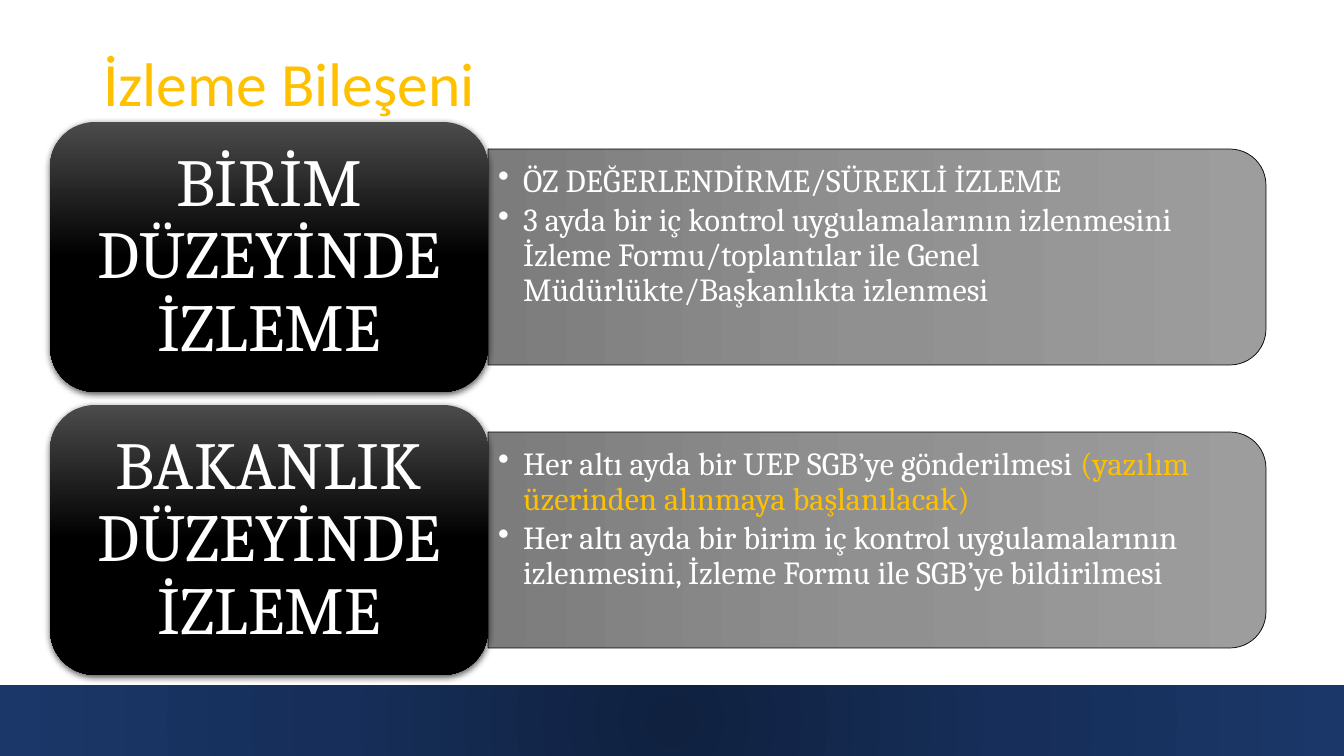
from lxml import etree
from pptx import Presentation
from pptx.dml.color import RGBColor
from pptx.enum.shapes import MSO_SHAPE as Shape
from pptx.enum.text import MSO_ANCHOR as Anchor, PP_ALIGN as Align
from pptx.oxml import parse_xml
from pptx.oxml.ns import nsdecls, qn
from pptx.util import Pt

SCALE = 914400 / 100.8  # EMU per px
COLORS = {"white": "FFFFFF", "gold": "FFC000", "black": "000000"}
BAND_STOPS = [(0, "10213F"), (50, "162E59"), (100, "1B3769")]
PANEL_STOPS = [(0, "9D9D9D"), (50, "909090"), (100, "7C7C7C")]
CARD_STOPS = [(0, "4B4B4B"), (50, "000000"), (100, "000000")]
DOWNWARD = '<a:lin ang="5400000" scaled="0"/>'
RADIAL = ('<a:path path="circle"><a:fillToRect l="50000" t="50000" '
          'r="50000" b="50000"/></a:path>')

# Each level: card heading, then bullets as lists of (text, color)
LEVELS = [
    ("BİRİM DÜZEYİNDE İZLEME", [
        [("ÖZ DEĞERLENDİRME/SÜREKLİ İZLEME", "white")],
        [("3 ayda bir iç kontrol uygulamalarının izlenmesini İzleme "
          "Formu/toplantılar ile Genel Müdürlükte/Başkanlıkta izlenmesi", "white")],
    ]),
    ("BAKANLIK DÜZEYİNDE İZLEME", [
        [("Her altı ayda bir UEP SGB’ye gönderilmesi ", "white"),
         ("(yazılım üzerinden alınmaya başlanılacak)", "gold")],
        [("Her altı ayda bir birim iç kontrol uygulamalarının izlenmesini, "
          "İzleme Formu ile SGB’ye bildirilmesi", "white")],
    ]),
]
FIRST_TOP, PITCH = 122, 283


def px(length):
    return round(length * SCALE)


def box(*lengths):
    return [px(length) for length in lengths]


def style_font(font, name, size, color):
    font.name, font.size = name, Pt(size)
    font.color.rgb = RGBColor.from_string(COLORS[color])


def set_insets(frame, left, top, right, bottom):
    frame.margin_left, frame.margin_top = px(left), px(top)
    frame.margin_right, frame.margin_bottom = px(right), px(bottom)


def add_gradient_shape(slide, kind, bounds, stops, direction):
    shape = slide.shapes.add_shape(kind, *box(*bounds))
    shape.shadow.inherit = False
    shape.line.fill.background()
    stops_xml = "".join(
        f'<a:gs pos="{position * 1000}"><a:srgbClr val="{color}"/></a:gs>'
        for position, color in stops)
    shape._element.spPr.find(qn("a:prstGeom")).addnext(parse_xml(
        f'<a:gradFill {nsdecls("a")} rotWithShape="1">'
        f'<a:gsLst>{stops_xml}</a:gsLst>{direction}</a:gradFill>'))
    return shape


def add_soft_shadow(shape):
    effects = shape._element.spPr.find(qn("a:effectLst"))
    effects.append(parse_xml(
        f'<a:outerShdw {nsdecls("a")} blurRad="{Pt(4.5)}" dist="{Pt(1.5)}" '
        f'dir="5400000" rotWithShape="0"><a:srgbClr val="{COLORS["black"]}">'
        '<a:alpha val="63000"/></a:srgbClr></a:outerShdw>'))


def add_title(slide, text):
    title = slide.shapes.title
    title.left, title.top, title.width, title.height = box(93, 40, 1159, 94)
    frame = title.text_frame
    frame.text = text
    frame.vertical_anchor = Anchor.MIDDLE
    paragraph = frame.paragraphs[0]
    paragraph.alignment = Align.LEFT
    paragraph.line_spacing = 0.9
    style_font(paragraph.runs[0].font, "Calibri", 44, "gold")


def add_panel(slide, top):
    # Drawn upright, then turned so the rounded end faces right
    panel = add_gradient_shape(slide, Shape.ROUND_2_SAME_RECTANGLE,
                               (769, top - 254, 216, 778), PANEL_STOPS, DOWNWARD)
    panel.rotation = 90
    panel.line.color.rgb = RGBColor.from_string(COLORS["black"])
    panel.line.width = Pt(0.5)


def add_bullets(slide, top, bullets):
    frame = slide.shapes.add_textbox(*box(488, top + 37, 767, 195)).text_frame
    frame.word_wrap = True
    frame.vertical_anchor = Anchor.MIDDLE
    set_insets(frame, 10, 5, 10, 45)
    for index, parts in enumerate(bullets):
        paragraph = frame.add_paragraph() if index else frame.paragraphs[0]
        properties = paragraph._p.get_or_add_pPr()
        properties.set("marL", str(px(25)))
        properties.set("indent", str(-px(25)))
        etree.SubElement(properties, qn("a:buChar"), char="•")
        paragraph.line_spacing = 0.9
        paragraph.space_after = Pt(3.5)
        for text, color in parts:
            run = paragraph.add_run()
            run.text = text
            style_font(run.font, "Cambria", 23, color)


def add_card(slide, top, heading):
    card = add_gradient_shape(slide, Shape.ROUNDED_RECTANGLE,
                              (50, top, 438, 270), CARD_STOPS, DOWNWARD)
    add_soft_shadow(card)
    frame = card.text_frame
    frame.text = heading
    frame.word_wrap = True
    frame.vertical_anchor = Anchor.MIDDLE
    set_insets(frame, 20, 10, 20, 10)
    paragraph = frame.paragraphs[0]
    paragraph.alignment = Align.CENTER
    paragraph.line_spacing = 0.9
    style_font(paragraph.runs[0].font, "Cambria", 48, "white")


def main():
    presentation = Presentation()
    presentation.slide_width, presentation.slide_height = box(1344, 756)
    slide = presentation.slides.add_slide(presentation.slide_layouts[5])

    # Footer band and title
    add_gradient_shape(slide, Shape.RECTANGLE, (0, 685, 1344, 71),
                       BAND_STOPS, RADIAL)
    add_title(slide, "İzleme Bileşeni")

    # Monitoring levels
    for index, (heading, bullets) in enumerate(LEVELS):
        top = FIRST_TOP + index * PITCH
        add_panel(slide, top)
        add_bullets(slide, top, bullets)
        add_card(slide, top, heading)

    presentation.save("out.pptx")


if __name__ == "__main__":
    main()
